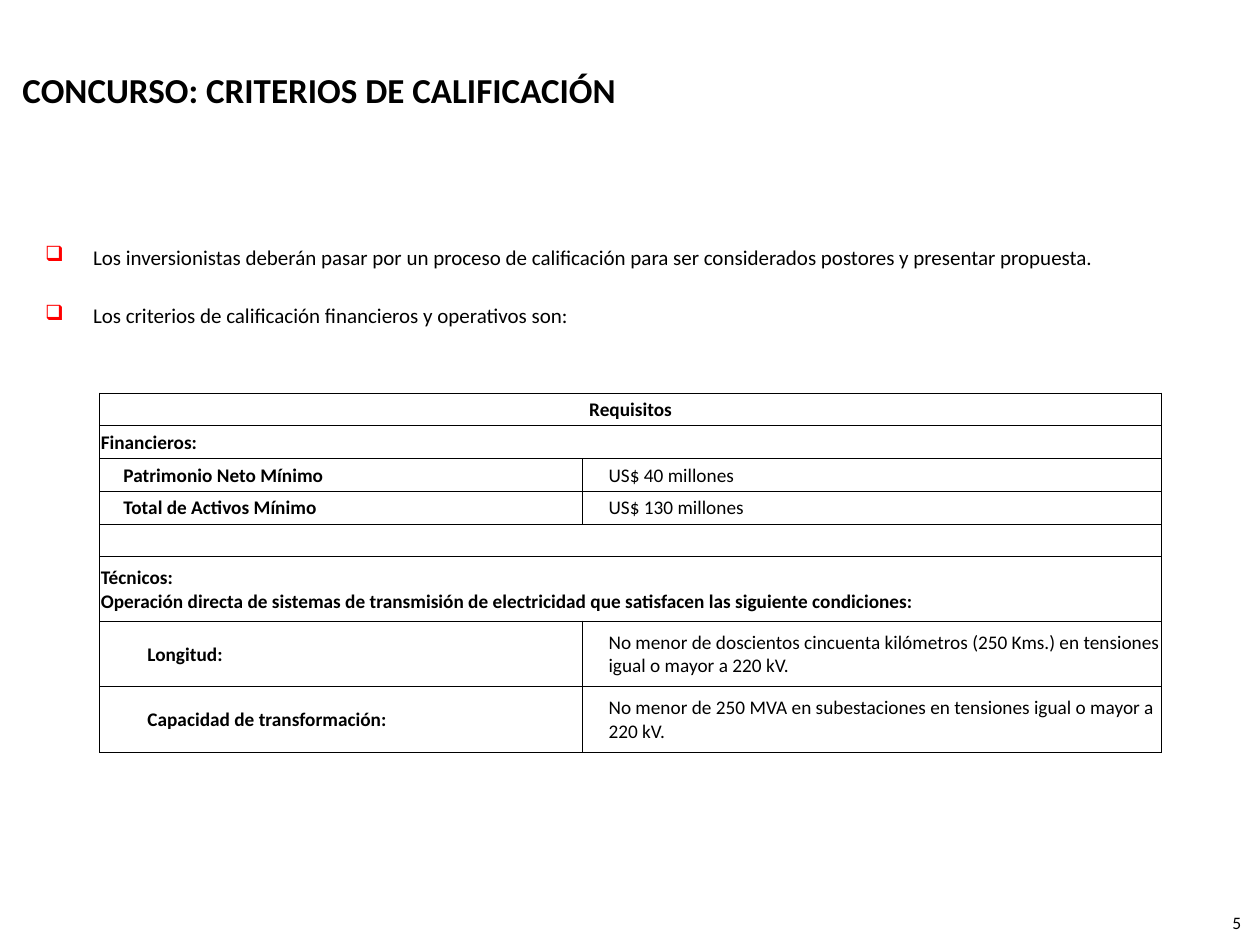
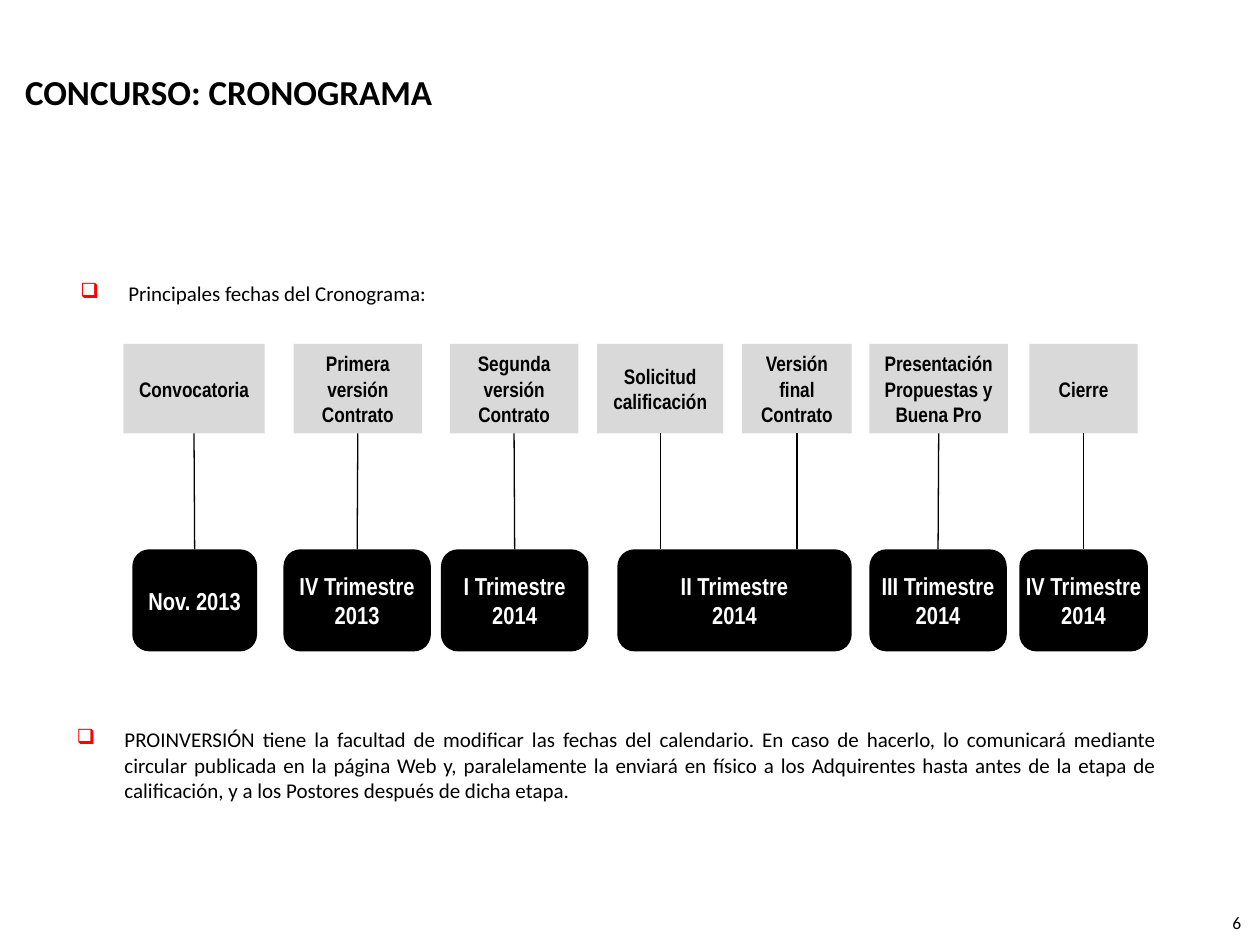
from lxml import etree
from pptx import Presentation, util as u
from pptx.dml.color import RGBColor
from pptx.enum import shapes, text
from pptx.oxml.ns import qn

BLACK, WHITE, GREY, RED = "000000", "FFFFFF", "D9D9D9", "FF0000"
BODY_FONT, CHART_FONT = "Calibri", "Arial Narrow"
LEFT, CENTER, RIGHT, JUSTIFY = (text.PP_ALIGN.LEFT, text.PP_ALIGN.CENTER,
                                text.PP_ALIGN.RIGHT, text.PP_ALIGN.JUSTIFY)

# Content of the criteria slide
CRITERIA_TITLE = "CONCURSO: CRITERIOS DE CALIFICACIÓN"
CRITERIA_BULLETS = [
    "Los inversionistas deberán pasar por un proceso de calificación para ser "
    "considerados postores y presentar propuesta.",
    "Los criterios de calificación financieros y operativos son:",
]
COLUMN_WIDTHS = (3.83, 4.6)
# height, left margin, label, value (None: the label spans both columns)
REQUIREMENTS = [
    (0.26, 0.01, "Requisitos", None),
    (0.26, 0.01, "Financieros:", None),
    (0.26, 0.19, "Patrimonio Neto Mínimo", "US$ 40 millones"),
    (0.26, 0.19, "Total de Activos Mínimo", "US$ 130 millones"),
    (0.26, 0.01, "", None),
    (0.51, 0.01, "Técnicos:\nOperación directa de sistemas de transmisión de "
                 "electricidad que satisfacen las siguiente condiciones:", None),
    (0.52, 0.38, "Longitud:", "No menor de doscientos cincuenta kilómetros "
                              "(250 Kms.) en tensiones igual o mayor a 220 kV."),
    (0.52, 0.38, "Capacidad de transformación:",
     "No menor de 250 MVA en subestaciones en tensiones igual o mayor a 220 kV."),
]

# Content of the schedule slide
SCHEDULE_TITLE = "CONCURSO: CRONOGRAMA"
SCHEDULE_INTRO = "Principales fechas del Cronograma:"
SCHEDULE_NOTE = (
    "PROINVERSIÓN tiene la facultad de modificar las fechas del calendario. En caso "
    "de hacerlo, lo comunicará mediante circular publicada en la página Web y, "
    "paralelamente la enviará en físico a los Adquirentes hasta antes de la etapa de "
    "calificación, y a los Postores después de dicha etapa.")
# date, left, width, steps as (label, left, width)
SCHEDULE = [
    ("Nov. 2013", 1.05, 0.99, [("Convocatoria", 0.98, 1.12)]),
    ("IV Trimestre\n2013", 2.25, 1.17, [("Primera versión Contrato", 2.33, 1.02)]),
    ("I Trimestre\n2014", 3.5, 1.17, [("Segunda versión Contrato", 3.57, 1.02)]),
    ("II Trimestre\n2014", 4.9, 1.86, [("Solicitud calificación", 4.74, 1),
                                       ("Versión final Contrato", 5.89, 0.87)]),
    ("III Trimestre\n2014", 6.9, 1.09,
     [("Presentación Propuestas y Buena Pro", 6.9, 1.1)]),
    ("IV Trimestre\n2014", 8.09, 1.02, [("Cierre", 8.17, 0.86)]),
]
STEP_TOP, STEP_HEIGHT = 2.73, 0.71
DATE_TOP, DATE_HEIGHT = 4.36, 0.81


def rgb(value):
    return RGBColor.from_string(value)


def inches(*values):
    return [u.Inches(value) for value in values]


def add_bullet(para):
    """Give a paragraph a hanging red square."""
    props = para._p.get_or_add_pPr()
    props.set("marL", str(u.Inches(0.38)))
    props.set("indent", str(-u.Inches(0.38)))
    color = etree.SubElement(props, qn("a:buClr"))
    etree.SubElement(color, qn("a:srgbClr"), val=RED)
    etree.SubElement(props, qn("a:buChar"), char="❑")


def write(frame, content, size, color=BLACK, bold=False, font=BODY_FONT,
          align=LEFT, bullet=False, gap=0):
    """Write one paragraph for each line of the content."""
    frame.text = content
    for index, para in enumerate(frame.paragraphs):
        if bullet:
            add_bullet(para)
        para.alignment = align
        if index:
            para.space_before = u.Pt(gap)
        para.font.size, para.font.name, para.font.bold = u.Pt(size), font, bold
        para.font.color.rgb = rgb(color)


def add_text(page, place, content, size, anchor=text.MSO_ANCHOR.TOP, **style):
    box = page.shapes.add_textbox(*inches(*place))
    box.text_frame.word_wrap = True
    box.text_frame.vertical_anchor = anchor
    write(box.text_frame, content, size, **style)


def add_page(deck, title, left, top, number):
    """Add a page with its title and page number."""
    page = deck.slides.add_slide(deck.slide_layouts[6])
    add_text(page, (left, top, 9.45, 0.6), title, 20,
             anchor=text.MSO_ANCHOR.MIDDLE, bold=True)
    add_text(page, (9.45, 7.19, 0.5, 0.32), str(number), 10, align=RIGHT)
    return page


def add_block(page, kind, place, fill, content, size, color, wrap):
    block = page.shapes.add_shape(kind, *inches(*place))
    block.shadow.inherit = False
    block.fill.solid()
    block.fill.fore_color.rgb = rgb(fill)
    block.line.fill.background()
    block.text_frame.word_wrap = wrap
    block.text_frame.vertical_anchor = text.MSO_ANCHOR.MIDDLE
    write(block.text_frame, content, size, color, True, CHART_FONT, CENTER)
    return block


def style_cell(cell, left_margin):
    """Set margins, thin black borders and no fill."""
    cell.vertical_anchor = text.MSO_ANCHOR.MIDDLE
    cell.margin_left = u.Inches(left_margin)
    cell.margin_top = cell.margin_right = u.Inches(0.01)
    cell.margin_bottom = 0
    props = cell._tc.get_or_add_tcPr()
    for side in ("a:lnL", "a:lnR", "a:lnT", "a:lnB"):
        border = etree.SubElement(props, qn(side), w=str(u.Pt(0.5)))
        fill = etree.SubElement(border, qn("a:solidFill"))
        etree.SubElement(fill, qn("a:srgbClr"), val=BLACK)
    cell.fill.background()


def add_requirements(page):
    heights = [row[0] for row in REQUIREMENTS]
    frame = page.shapes.add_table(len(heights), len(COLUMN_WIDTHS), *inches(
        0.79, 3.12, sum(COLUMN_WIDTHS), sum(heights)))
    table = frame.table
    table.first_row = table.horz_banding = False
    for column, width in zip(table.columns, COLUMN_WIDTHS):
        column.width = u.Inches(width)
    for index, (height, margin, label, value) in enumerate(REQUIREMENTS):
        table.rows[index].height = u.Inches(height)
        name_cell, value_cell = table.cell(index, 0), table.cell(index, 1)
        style_cell(name_cell, margin)
        style_cell(value_cell, 0.21)
        write(name_cell.text_frame, label, 11, bold=True,
              align=LEFT if index else CENTER)
        write(value_cell.text_frame, value or "", 11)
        # Empty cells need a small end mark to keep the row low
        for cell in (name_cell, value_cell):
            if not cell.text:
                etree.SubElement(cell.text_frame.paragraphs[0]._p,
                                 qn("a:endParaRPr"), sz="1100")
        if value is None:
            name_cell.merge(value_cell)


def add_schedule(page):
    for date, date_left, date_width, steps in SCHEDULE:
        date_box = add_block(
            page, shapes.MSO_SHAPE.ROUNDED_RECTANGLE,
            (date_left, DATE_TOP, date_width, DATE_HEIGHT),
            BLACK, date, 14, WHITE, False)
        for label, left, width in steps:
            step_box = add_block(
                page, shapes.MSO_SHAPE.RECTANGLE,
                (left, STEP_TOP, width, STEP_HEIGHT), GREY, label, 12, BLACK, True)
            middle = left + width / 2
            link = page.shapes.add_connector(shapes.MSO_CONNECTOR.STRAIGHT, *inches(
                middle, STEP_TOP + STEP_HEIGHT, middle, DATE_TOP))
            link.line.color.rgb = rgb(BLACK)
            link.line.width = u.Pt(0.75)
            etree.SubElement(link._element.spPr, qn("a:effectLst"))
            link.begin_connect(step_box, 2)
            if len(steps) == 1:
                link.end_connect(date_box, 0)


def main():
    deck = Presentation()
    deck.slide_width, deck.slide_height = inches(10, 7.5)

    # Qualification criteria
    page = add_page(deck, CRITERIA_TITLE, 0.08, 0.41, 5)
    add_text(page, (0.26, 1.89, 9.48, 5.04), "\n".join(CRITERIA_BULLETS), 12,
             bullet=True, gap=19)
    add_requirements(page)

    # Schedule
    page = add_page(deck, SCHEDULE_TITLE, 0.1, 0.43, 6)
    add_text(page, (0.54, 2.18, 3.03, 0.31), SCHEDULE_INTRO, 12,
             align=JUSTIFY, bullet=True)
    add_schedule(page)
    add_text(page, (0.51, 5.72, 8.77, 0.71), SCHEDULE_NOTE, 12,
             align=JUSTIFY, bullet=True)

    deck.save("out.pptx")


if __name__ == "__main__":
    main()
